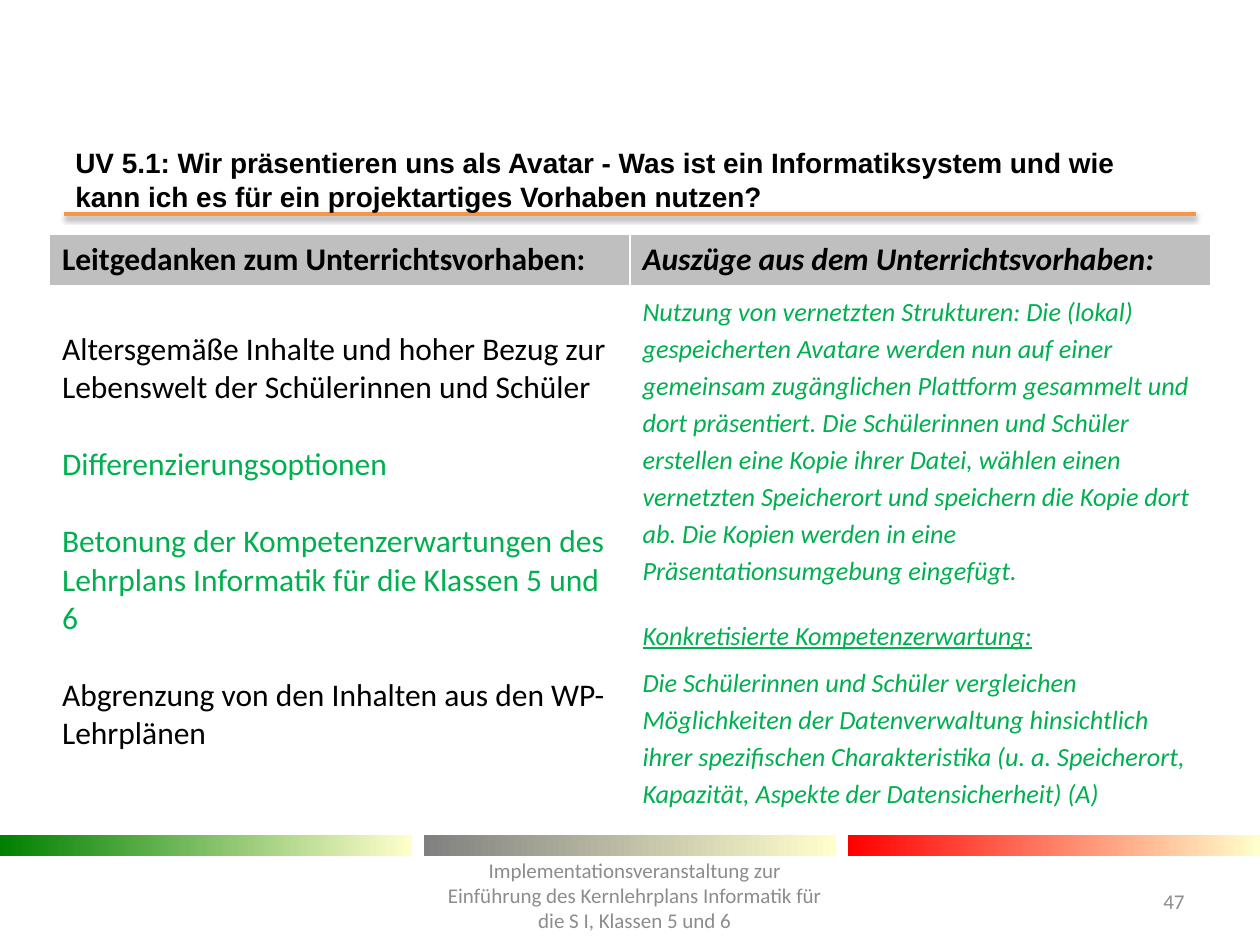
"""Build the slide on teaching unit UV 5.1."""
from lxml.etree import SubElement
from pptx import Presentation
from pptx.dml.color import RGBColor
from pptx.enum.shapes import MSO_CONNECTOR, MSO_SHAPE
from pptx.enum.text import MSO_ANCHOR, PP_ALIGN
from pptx.oxml.ns import qn
from pptx.util import Pt

BLACK = RGBColor(0x00, 0x00, 0x00)
WHITE = RGBColor(0xFF, 0xFF, 0xFF)
GRAY = RGBColor(0x8C, 0x8C, 0x8C)
HEADER_GRAY = RGBColor(0xBF, 0xBF, 0xBF)
ORANGE = RGBColor(0xF7, 0x96, 0x46)
TEXT_GREEN = RGBColor(0x00, 0xB0, 0x50)
BAR_GREEN = RGBColor(0x00, 0x80, 0x00)
BAR_GRAY = RGBColor(0x80, 0x80, 0x80)
BAR_RED = RGBColor(0xFF, 0x00, 0x00)
CREAM = RGBColor(0xFF, 0xFF, 0xCC)

GUIDELINES = [
    ("Altersgemäße Inhalte und hoher Bezug zur Lebenswelt der Schülerinnen und Schüler", BLACK),
    ("Differenzierungsoptionen", TEXT_GREEN),
    ("Betonung der Kompetenzerwartungen des Lehrplans Informatik für die Klassen 5 und 6", TEXT_GREEN),
    ("Abgrenzung von den Inhalten aus den WP-Lehrplänen", BLACK),
]
EXCERPTS = [
    ("Nutzung von vernetzten Strukturen: Die (lokal) gespeicherten Avatare werden nun auf einer "
     "gemeinsam zugänglichen Plattform gesammelt und dort präsentiert. Die Schülerinnen und Schüler "
     "erstellen eine Kopie ihrer Datei, wählen einen vernetzten Speicherort und speichern die Kopie "
     "dort ab. Die Kopien werden in eine Präsentationsumgebung eingefügt.", 0, 10, False),
    ("Konkretisierte Kompetenzerwartung:", 6, 0, True),
    ("Die Schülerinnen und Schüler vergleichen Möglichkeiten der Datenverwaltung hinsichtlich ihrer "
     "spezifischen Charakteristika (u. a. Speicherort, Kapazität, Aspekte der Datensicherheit) (A)",
     6, 10, False),
]


class SlideBuilder:
    """Hold the style and the current slide."""

    font = "Calibri"
    header_size = 18
    excerpt_size = 15
    guideline_gap = 22

    def __init__(self, slide):
        """Keep the slide to draw on."""
        self.slide = slide

    def set_text(self, paragraph, text, size, color, font=None, **emphasis):
        """Set a paragraph's text and format its run."""
        paragraph.text = text
        run_font = paragraph.runs[0].font
        run_font.name = font or self.font
        run_font.size = Pt(size)
        run_font.color.rgb = color
        run_font.bold = emphasis.get("bold", False)
        run_font.italic = emphasis.get("italic", False)
        run_font.underline = emphasis.get("underline", False)

    def text(self, left, top, width, height, text, size, color, align=PP_ALIGN.LEFT, **style):
        """Add a vertically centred text box."""
        box = self.slide.shapes.add_textbox(Pt(left), Pt(top), Pt(width), Pt(height))
        box.text_frame.word_wrap = True
        box.text_frame.vertical_anchor = MSO_ANCHOR.MIDDLE
        paragraph = box.text_frame.paragraphs[0]
        paragraph.alignment = align
        self.set_text(paragraph, text, size, color, **style)

    def rule(self, left, right, top):
        """Add the orange rule with its soft shadow."""
        connector = self.slide.shapes.add_connector(
            MSO_CONNECTOR.STRAIGHT, Pt(left), Pt(top), Pt(right), Pt(top))
        connector.line.color.rgb = ORANGE
        connector.line.width = Pt(2)
        effects = SubElement(connector.element.spPr, qn("a:effectLst"))
        shadow = SubElement(effects, qn("a:outerShdw"), blurRad=str(Pt(3.1)), dist=str(Pt(1.6)),
                            dir="5400000", rotWithShape="0")
        color = SubElement(shadow, qn("a:srgbClr"), val=str(BLACK))
        SubElement(color, qn("a:alpha"), val="38000")

    def bar(self, left, top, width, height, color):
        """Add a bar that fades from its colour to cream."""
        shape = self.slide.shapes.add_shape(
            MSO_SHAPE.RECTANGLE, Pt(left), Pt(top), Pt(width), Pt(height))
        shape.shadow.inherit = False
        shape.line.fill.background()
        shape.fill.gradient()
        shape.fill.gradient_angle = 0
        for stop, stop_color in zip(shape.fill.gradient_stops, (color, CREAM)):
            stop.color.rgb = stop_color

    def table(self, left, top, column_width, row_heights):
        """Add the two-column table and return it."""
        table = self.slide.shapes.add_table(
            2, 2, Pt(left), Pt(top), Pt(2 * column_width), Pt(sum(row_heights))).table
        for column in table.columns:
            column.width = Pt(column_width)
        for row, height, color in zip(table.rows, row_heights, (HEADER_GRAY, WHITE)):
            row.height = Pt(height)
            for cell in row.cells:
                cell.fill.solid()
                cell.fill.fore_color.rgb = color
        return table

    def header(self, cell, text, italic):
        """Fill a header cell."""
        self.set_text(cell.text_frame.paragraphs[0], text, self.header_size, BLACK,
                      bold=True, italic=italic)

    def guidelines(self, cell, items):
        """Fill a cell with evenly spaced guidelines."""
        cell.margin_top = Pt(3.6 + self.guideline_gap)
        cell.text_frame.text = "\n".join(text for text, _ in items)
        for index, (paragraph, (text, color)) in enumerate(zip(cell.text_frame.paragraphs, items)):
            paragraph.space_before = Pt(self.guideline_gap if index else 0)
            self.set_text(paragraph, text, self.header_size, color)

    def excerpts(self, cell, items):
        """Fill a cell with green italic excerpts."""
        cell.text_frame.text = "\n".join(item[0] for item in items)
        for paragraph, (text, before, after, underline) in zip(cell.text_frame.paragraphs, items):
            paragraph.line_spacing = 1.15
            paragraph.space_before = Pt(before)
            paragraph.space_after = Pt(after)
            self.set_text(paragraph, text, self.excerpt_size, TEXT_GREEN,
                          italic=True, underline=underline)


def main():
    """Build and save the presentation."""
    presentation = Presentation()
    presentation.slide_width, presentation.slide_height = Pt(720), Pt(540)
    builder = SlideBuilder(presentation.slides.add_slide(presentation.slide_layouts[6]))

    builder.rule(36.7, 683.3, 122.4)
    for index, color in enumerate((BAR_GREEN, BAR_GRAY, BAR_RED)):
        builder.bar(index * 242.3, 477.4, 235.4, 11.5, color)
    builder.text(36, 88.5, 648, 28,
                 "UV 5.1: Wir präsentieren uns als Avatar - Was ist ein Informatiksystem und wie "
                 "kann ich es für ein projektartiges Vorhaben nutzen?",
                 16, BLACK, font="Arial", bold=True)
    builder.text(638, 500.5, 46, 29, "47", 12, GRAY, PP_ALIGN.RIGHT)

    table = builder.table(28.3, 134, 331.7, (29.2, 305))
    builder.header(table.cell(0, 0), "Leitgedanken zum Unterrichtsvorhaben:", False)
    builder.header(table.cell(0, 1), "Auszüge aus dem Unterrichtsvorhaben:", True)
    builder.guidelines(table.cell(1, 0), GUIDELINES)
    builder.excerpts(table.cell(1, 1), EXCERPTS)

    builder.text(246.5, 491, 232.5, 41,
                 "Implementationsveranstaltung zur Einführung des Kernlehrplans Informatik für "
                 "die S I, Klassen 5 und 6", 12, GRAY, PP_ALIGN.CENTER)
    presentation.save("out.pptx")


if __name__ == "__main__":
    main()
